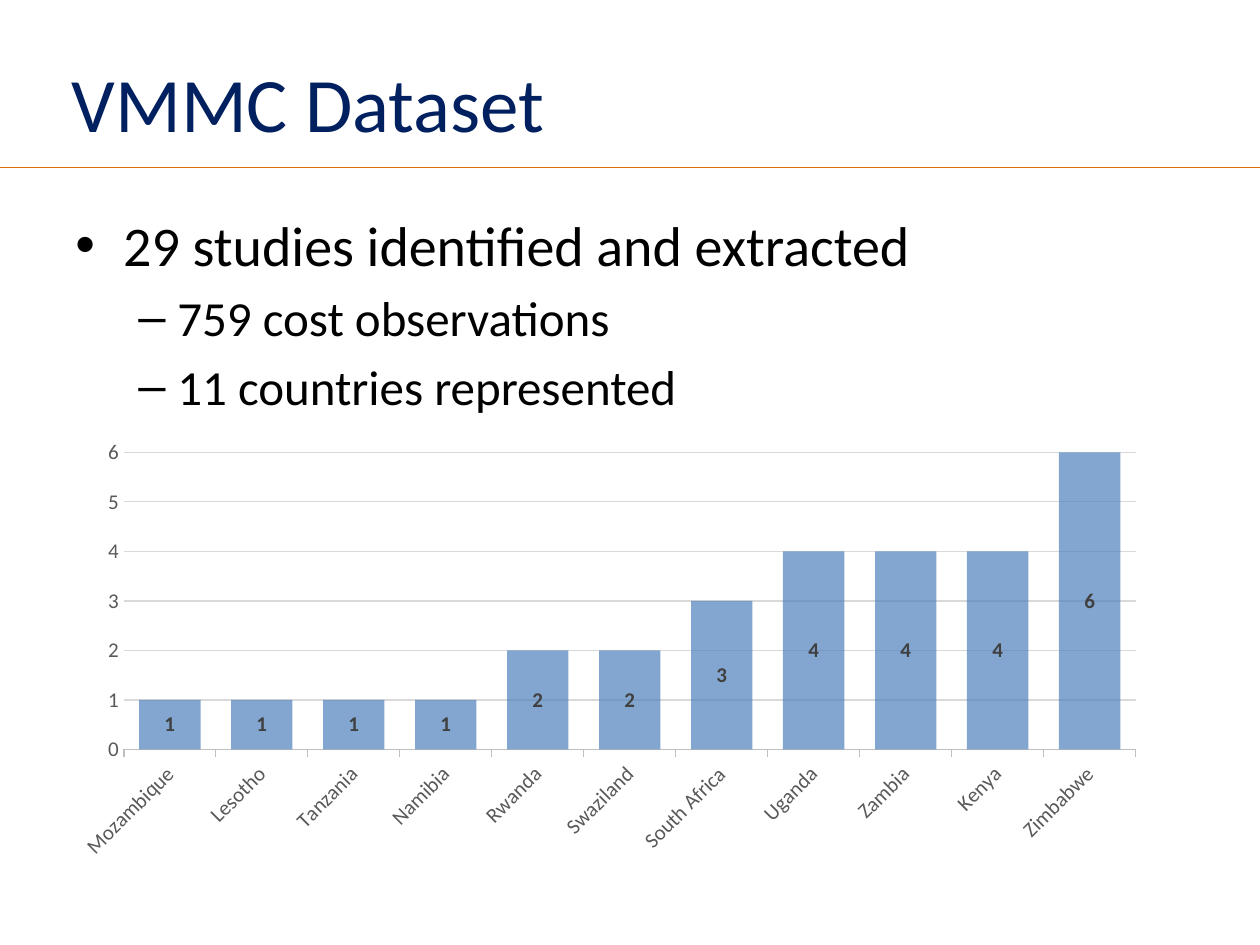
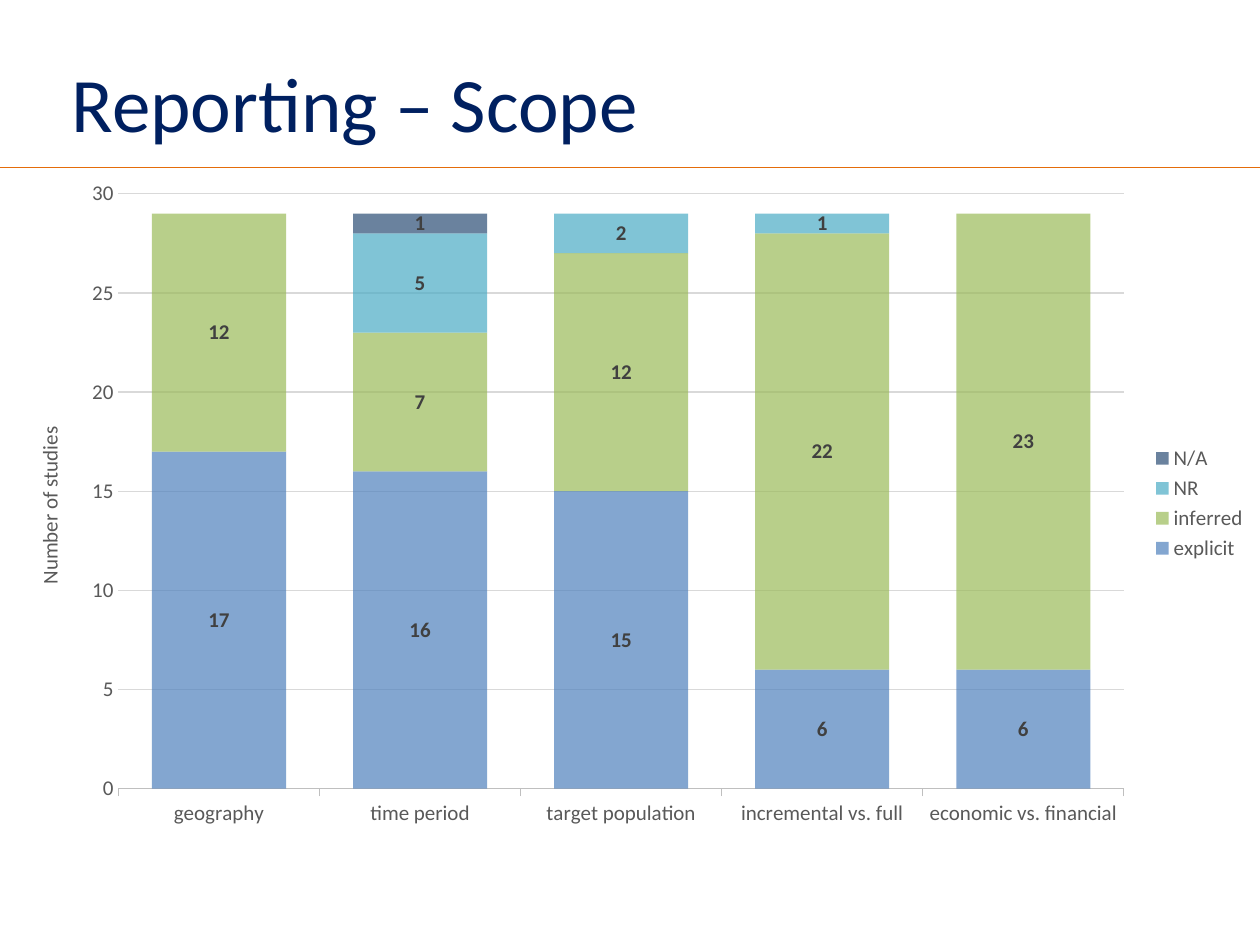
from collections import namedtuple
from lxml import etree
from pptx import Presentation
from pptx.chart.data import CategoryChartData
from pptx.dml.color import RGBColor
from pptx.enum.chart import XL_CHART_TYPE as ChartType
from pptx.enum.chart import XL_LABEL_POSITION as LabelPosition
from pptx.enum.chart import XL_LEGEND_POSITION as LegendPosition
from pptx.enum.chart import XL_TICK_MARK as TickMark
from pptx.enum.shapes import MSO_CONNECTOR as Connector
from pptx.enum.text import MSO_ANCHOR as Anchor
from pptx.oxml import parse_xml
from pptx.oxml.ns import nsdecls, qn
from pptx.util import Inches, Pt

WIDTH, HEIGHT = Inches(10), Inches(7.5)
COLUMN, ROW = WIDTH / 100, HEIGHT / 75
FONT = "Calibri"
NAVY, ORANGE, BLACK = "002060", "E46C0A", "000000"
BLUE, GREEN, AQUA, SLATE = "4F81BD", "9BBB59", "4BACC6", "2C4D75"
AXIS_TEXT, LABEL_TEXT, AXIS_LINE, GRID_LINE = "595959", "404040", "BFBFBF", "D9D9D9"

Box = namedtuple("Box", "left top width height")
Level = namedtuple("Level", "size bullet margin hanging")
Series = namedtuple("Series", "name values color")

HEADER = Box(0, 0, 100, 13.3)
LEVELS = [Level(32, "•", 3.8, 3.8), Level(28, "–", 8.1, 3.1)]


def rgb(color):
    return RGBColor.from_string(color)


def emu(box):
    return (round(box.left * COLUMN), round(box.top * ROW),
            round(box.width * COLUMN), round(box.height * ROW))


def style_font(font, size, color, bold=False):
    font.name = FONT
    font.size = Pt(size)
    font.bold = bold
    font.color.rgb = rgb(color)


def style_line(line, color, width):
    line.color.rgb = rgb(color)
    line.width = Pt(width)


def add_text_frame(slide, box, anchor):
    frame = slide.shapes.add_textbox(*emu(box)).text_frame
    frame.word_wrap = True
    frame.vertical_anchor = anchor
    return frame


def add_run(paragraph, text, size, color):
    run = paragraph.add_run()
    run.text = text
    style_font(run.font, size, color)


def add_header(slide, box, title):
    bottom = round((box.top + box.height) * ROW)
    left = round(box.left * COLUMN)
    right = round((box.left + box.width) * COLUMN)
    rule = slide.shapes.add_connector(Connector.STRAIGHT, left, bottom, right, bottom)
    style_line(rule.line, ORANGE, 1)
    etree.SubElement(rule._element.spPr, qn("a:effectLst"))
    title_box = Box(box.left + 4.7, box.top + 2.9, box.width - 9.7, box.height - 2.9)
    frame = add_text_frame(slide, title_box, Anchor.MIDDLE)
    add_run(frame.paragraphs[0], title, 44, NAVY)


def add_bullets(slide, box, items):
    frame = add_text_frame(slide, box, Anchor.TOP)
    for index, (depth, text) in enumerate(items):
        level = LEVELS[depth]
        paragraph = frame.add_paragraph() if index else frame.paragraphs[0]
        paragraph.level = depth
        if index:
            paragraph.space_before = Pt(level.size * 0.2)
        properties = paragraph._p.get_or_add_pPr()
        properties.set("marL", str(round(level.margin * COLUMN)))
        properties.set("indent", str(-round(level.hanging * COLUMN)))
        etree.SubElement(properties, qn("a:buFont"), typeface="Arial")
        etree.SubElement(properties, qn("a:buChar"), char=level.bullet)
        add_run(paragraph, text, level.size, BLACK)


def set_layout(element, **shares):
    for old in element.findall(qn("c:layout")):
        element.remove(old)
    inner = '<c:layoutTarget val="inner"/>' if "w" in shares else ""
    modes = "".join(f'<c:{key}Mode val="edge"/>' for key in "xy")
    sizes = "".join(f'<c:{key} val="{share}"/>' for key, share in shares.items())
    layout = parse_xml(f'<c:layout {nsdecls("c")}><c:manualLayout>'
                       f'{inner}{modes}{sizes}</c:manualLayout></c:layout>')
    text = element.find(qn("c:tx"))
    if text is None:
        element.insert(0, layout)
    else:
        text.addnext(layout)


def style_series(plot_series, color):
    plot_series.invert_if_negative = False
    fill = plot_series.format.fill
    fill.solid()
    fill.fore_color.rgb = rgb(color)
    for fill_color in plot_series._element.iter(qn("a:srgbClr")):
        etree.SubElement(fill_color, qn("a:alpha"), val="70000")
    labels = plot_series.data_labels
    labels.show_value = True
    labels.position = LabelPosition.CENTER
    labels.number_format = "0;;"
    labels.number_format_is_linked = False
    style_font(labels.font, 12, LABEL_TEXT, bold=True)


def style_axes(chart, maximum, step, value_tick):
    categories, values = chart.category_axis, chart.value_axis
    for axis in (categories, values):
        style_font(axis.tick_labels.font, 12, AXIS_TEXT)
        axis.minor_tick_mark = TickMark.NONE
    categories.major_tick_mark = TickMark.OUTSIDE
    style_line(categories.format.line, AXIS_LINE, 0.75)
    values.major_tick_mark = value_tick
    values.format.line.fill.background()
    values.minimum_scale, values.maximum_scale, values.major_unit = 0, maximum, step
    style_line(values.major_gridlines.format.line, GRID_LINE, 0.75)


def add_stacked_columns(slide, box, categories, series, maximum, step, value_tick):
    data = CategoryChartData(number_format="0")
    data.categories = categories
    for entry in series:
        data.add_series(entry.name, entry.values)
    chart = slide.shapes.add_chart(ChartType.COLUMN_STACKED, *emu(box), data).chart
    chart.has_title = False
    chart.has_legend = False
    style_font(chart.font, 10, BLACK)
    plot = chart.plots[0]
    plot.gap_width, plot.overlap, plot.vary_by_categories = 50, 100, False
    for plot_series, entry in zip(plot.series, series):
        style_series(plot_series, entry.color)
    style_axes(chart, maximum, step, value_tick)
    return chart


def add_country_chart(slide, box):
    studies = {"Mozambique": 1, "Lesotho": 1, "Tanzania": 1, "Namibia": 1,
               "Rwanda": 2, "Swaziland": 2, "South Africa": 3, "Uganda": 4,
               "Zambia": 4, "Kenya": 4, "Zimbabwe": 6}
    series = [Series("Series 1", list(studies.values()), BLUE)]
    chart = add_stacked_columns(slide, box, list(studies), series, 6, 1, TickMark.NONE)
    set_layout(chart._chartSpace.chart.plotArea, x=0.047, y=0.112, w=0.936, h=0.629)
    label_body = chart.category_axis._element.find(qn("c:txPr")).find(qn("a:bodyPr"))
    label_body.set("rot", str(-45 * 60000))
    label_body.set("vert", "horz")


def add_scope_chart(slide, box):
    categories = ["geography", "time period", "target population",
                  "incremental vs. full", "economic vs. financial"]
    series = [Series("explicit", [17, 16, 15, 6, 6], BLUE),
              Series("inferred", [12, 7, 12, 22, 23], GREEN),
              Series("NR", [0, 5, 2, 1, 0], AQUA),
              Series("N/A", [0, 1, 0, 0, 0], SLATE)]
    chart = add_stacked_columns(slide, box, categories, series, 30, 5, TickMark.NONE)
    set_layout(chart._chartSpace.chart.plotArea, x=0.094, y=0.039, w=0.798, h=0.886)
    title = chart.value_axis.axis_title
    add_run(title.text_frame.paragraphs[0], "Number of studies", 12, AXIS_TEXT)
    set_layout(title._element, x=0.025, y=0.38)
    chart.has_legend = True
    chart.legend.position = LegendPosition.RIGHT
    chart.legend.include_in_layout = False
    style_font(chart.legend.font, 12, AXIS_TEXT)


def add_slide(presentation, title):
    slide = presentation.slides.add_slide(presentation.slide_layouts[6])
    add_header(slide, HEADER, title)
    return slide


def main():
    presentation = Presentation()
    presentation.slide_width, presentation.slide_height = WIDTH, HEIGHT

    dataset = add_slide(presentation, "VMMC Dataset")
    add_bullets(dataset, Box(5, 16.2, 90, 17.5),
                [(0, "29 studies identified and extracted"),
                 (1, "759 cost observations"),
                 (1, "11 countries represented")])
    add_country_chart(dataset, Box(5.8, 31.7, 85.8, 37.5))

    scope = add_slide(presentation, "Reporting – Scope")
    add_scope_chart(scope, Box(0, HEADER.height, 100, 53.3))

    presentation.save("out.pptx")


if __name__ == "__main__":
    main()
